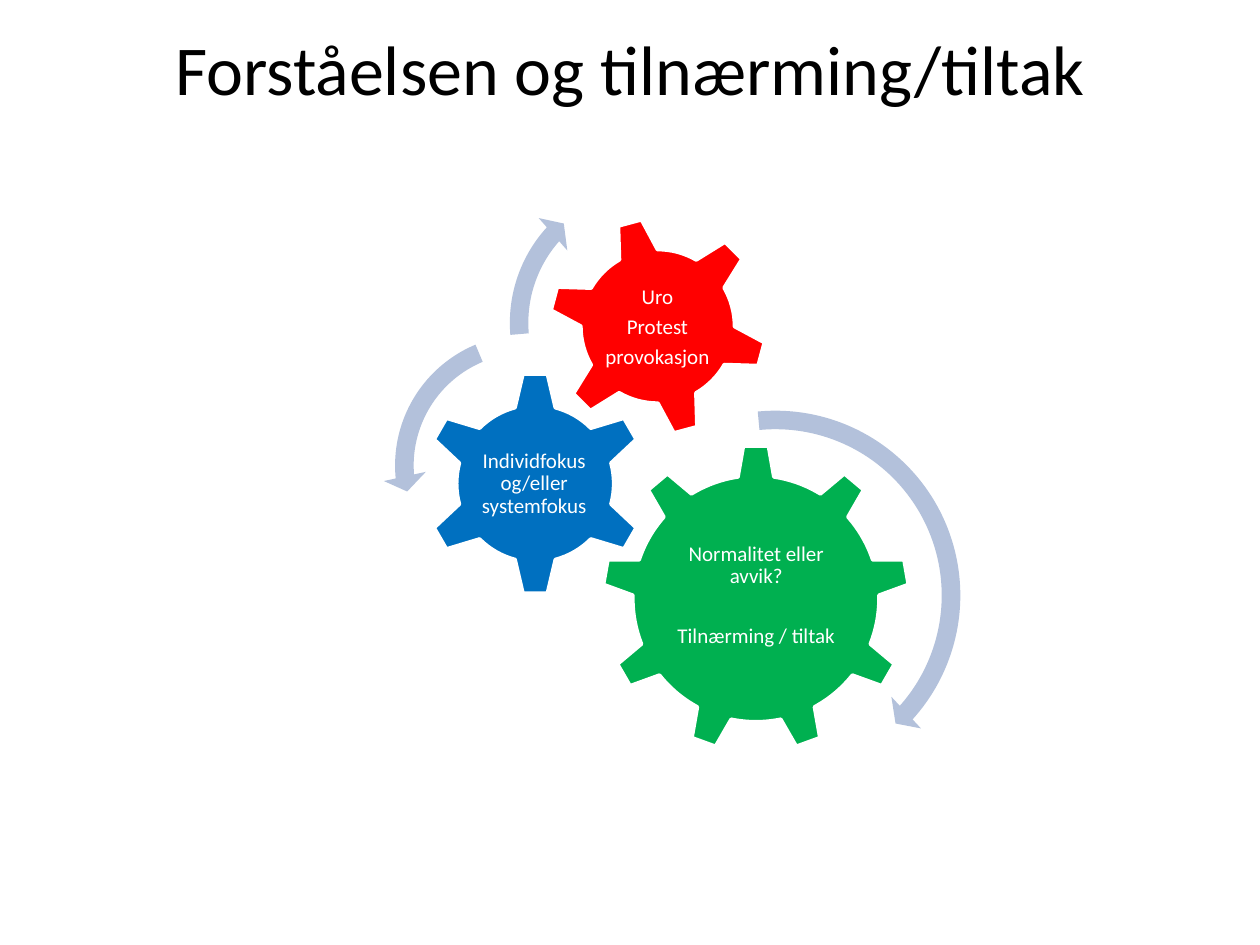
from dataclasses import dataclass

from pptx import Presentation
from pptx.dml.color import RGBColor
from pptx.enum.shapes import MSO_SHAPE
from pptx.enum.text import MSO_ANCHOR, PP_ALIGN
from pptx.util import Cm, Pt


@dataclass(frozen=True)
class Theme:
    font: str = "Calibri"
    title_size: Pt = Pt(40)
    label_size: Pt = Pt(12)
    black: RGBColor = RGBColor(0x00, 0x00, 0x00)
    white: RGBColor = RGBColor(0xFF, 0xFF, 0xFF)
    green: RGBColor = RGBColor(0x00, 0xB0, 0x50)
    blue: RGBColor = RGBColor(0x00, 0x70, 0xC0)
    red: RGBColor = RGBColor(0xFF, 0x00, 0x00)
    arrow: RGBColor = RGBColor(0xB3, 0xC1, 0xDB)


theme = Theme()


def format_paragraph(paragraph, size, color):
    paragraph.alignment = PP_ALIGN.CENTER
    paragraph.font.name = theme.font
    paragraph.font.size = size
    paragraph.font.color.rgb = color


def add_square_shape(shapes, kind, left, top, size, color):
    """Add a filled, shadowless shape as wide as it is high, in centimetres."""
    shape = shapes.add_shape(kind, Cm(left), Cm(top), Cm(size), Cm(size))
    shape.shadow.inherit = False
    shape.fill.solid()
    shape.fill.fore_color.rgb = color
    return shape


presentation = Presentation()
presentation.slide_width, presentation.slide_height = Cm(25.4), Cm(19.05)
slide = presentation.slides.add_slide(presentation.slide_layouts[5])

title = slide.shapes.title
title.left, title.top, title.width, title.height = Cm(1.27), Cm(0.38), Cm(22.86), Cm(3.18)
title.text_frame.text = "Forståelsen og tilnærming/tiltak"
title.text_frame.vertical_anchor = MSO_ANCHOR.TOP
format_paragraph(title.text_frame.paragraphs[0], theme.title_size, theme.black)

diagram = slide.shapes.add_group_shape().shapes

# Gear: kind, left, top, size, rotation, colour; label: box, space after, lines
gears = [
    (MSO_SHAPE.GEAR_9, 12.14, 8.97, 6.2, 0, theme.green,
     (13.39, 10.41, 3.71, 3.2), 21.4, ["Normalitet eller avvik?", "Tilnærming / tiltak"]),
    (MSO_SHAPE.GEAR_6, 8.53, 7.49, 4.52, 0, theme.blue,
     (9.65, 8.64, 2.24, 2.24), 0, ["Individfokus og/eller systemfokus"]),
    (MSO_SHAPE.GEAR_6, 11.05, 4.37, 4.42, 345, theme.red,
     (12.01, 5.36, 2.49, 2.49), 4.2, ["Uro", "Protest", "provokasjon"]),
]
for kind, left, top, size, rotation, color, label_box, space_after, lines in gears:
    gear = add_square_shape(diagram, kind, left, top, size, color)
    gear.rotation = rotation
    gear.line.color.rgb = theme.white
    gear.line.width = Pt(2)

    label = diagram.add_textbox(*map(Cm, label_box))
    frame = label.text_frame
    frame.word_wrap = True
    frame.vertical_anchor = MSO_ANCHOR.MIDDLE
    frame.margin_left = frame.margin_right = Cm(0.04)
    frame.margin_top = frame.margin_bottom = Cm(0.04)
    frame.text = "\n".join(lines)
    for paragraph in frame.paragraphs:
        format_paragraph(paragraph, theme.label_size, theme.white)
        paragraph.line_spacing = 0.9
    for paragraph in frame.paragraphs[:-1]:
        paragraph.space_after = Pt(space_after)

# Arrow: kind, left, top, size, band width in %, angles in degrees, head width in %
arrows = [
    (MSO_SHAPE.CIRCULAR_ARROW, 11.66, 8.03, 7.95, 4.7, (4.98, 41.88, 264.47), 5.5),
    (MSO_SHAPE.LEFT_CIRCULAR_ARROW, 7.72, 6.5, 5.77, 6.5, (7.17, 174.82, 247.3), 7.5),
    (MSO_SHAPE.CIRCULAR_ARROW, 10.03, 3.4, 6.22, 6, (6.57, 221.9, 175.14), 7),
]
for kind, left, top, size, band, angles, head in arrows:
    arrow = add_square_shape(diagram, kind, left, top, size, theme.arrow)
    arrow.line.fill.background()
    # Angles are stored in 60000ths of a degree, adjustments in 100000ths
    values = [band / 100, *(angle * 0.6 for angle in angles), head / 100]
    for index, value in enumerate(values):
        arrow.adjustments[index] = value

presentation.save("out.pptx")
